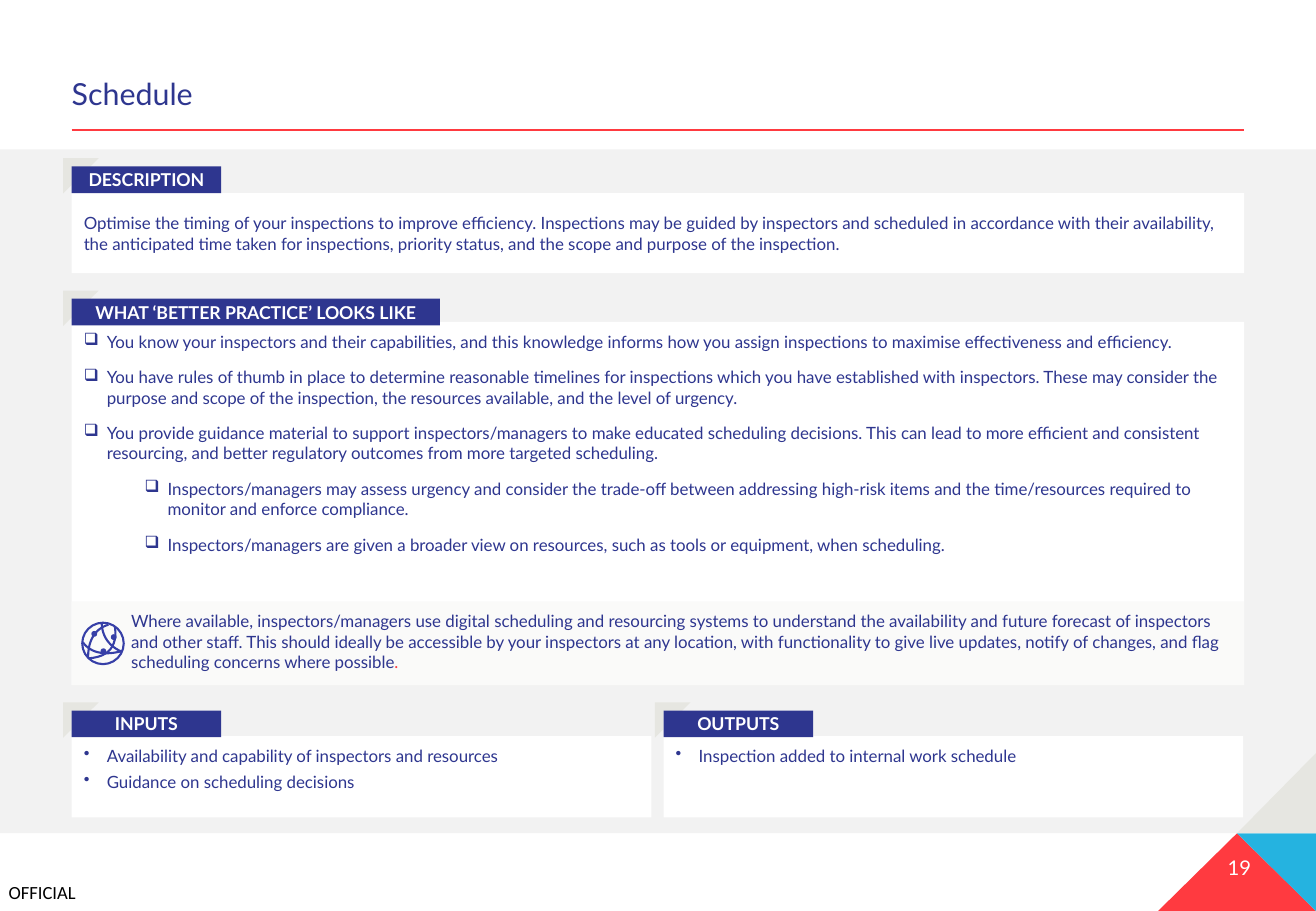
import pptx
import pptx.dml.color
import pptx.enum.shapes
import pptx.enum.text
import pptx.oxml
import pptx.oxml.ns
import pptx.util
from dataclasses import dataclass

WIDE, HIGH = 10.83, 7.5
KIND = pptx.enum.shapes.MSO_SHAPE
ALIGN = pptx.enum.text.PP_ALIGN
ANCHOR = pptx.enum.text.MSO_ANCHOR


@dataclass
class Theme:
    navy: str = "2E368F"
    red: str = "FF3A40"
    cyan: str = "25B3E0"
    stone: str = "E6E6E1"
    band: str = "F2F2F2"
    note: str = "FAFAF9"
    icon: str = "363FA7"
    white: str = "FFFFFF"
    black: str = "000000"
    font: str = "Lato"
    mark: str = "Calibri"
    title: float = 18
    page: float = 12
    label: float = 11
    tag: float = 10.5
    body: float = 10


LOOK = Theme()

# Grid in percent of the slide's width and height
LEFT, SPAN = 5.45, 89.1
HALF, RIGHT = 44.04, 50.42
TAG = 11.36


def col(share):
    return pptx.util.Inches(WIDE * share / 100)


def row(share):
    return pptx.util.Inches(HIGH * share / 100)


def place(left, top, width, height):
    return col(left), row(top), col(width), row(height)


def color(code):
    return pptx.dml.color.RGBColor.from_string(code)


def apply(item, values):
    for name, value in values.items():
        setattr(item, name, value)


def paint(shape, fill=None, line=None, weight=1):
    shape.shadow.inherit = False
    for part, code in ((shape.fill, fill), (shape.line.fill, line)):
        if code:
            part.solid()
            part.fore_color.rgb = color(code)
        else:
            part.background()
    if line:
        shape.line.width = pptx.util.Pt(weight)


def bullet(para, sign, left, hang):
    props = para._p.get_or_add_pPr()
    props.set("marL", str(left))
    props.set("indent", str(-hang))
    if sign:
        mark = pptx.oxml.parse_xml(
            f'<a:buChar {pptx.oxml.ns.nsdecls("a")} char="{sign}"/>')
        props.append(mark)


def write(frame, paras, size, ink, font=LOOK.font, bold=False, pad=(0.92, 0.67),
          anchor=ANCHOR.TOP, sign=None, inset=0, **form):
    """Each paragraph is a list of runs (text, ink) with a level before it."""
    apply(frame, {"word_wrap": True, "vertical_anchor": anchor,
                  "margin_left": col(pad[0]), "margin_right": col(pad[0]),
                  "margin_top": row(pad[1]), "margin_bottom": row(pad[1])})
    before = form.pop("before", 0)
    for index, (level, runs) in enumerate(paras):
        para = frame.paragraphs[0] if index == 0 else frame.add_paragraph()
        hang = 1.75 if sign else 0
        if sign or inset:
            bullet(para, sign, col(hang + inset + 4.62 * level), col(hang))
        apply(para, {"level": level, "alignment": ALIGN.LEFT, **form})
        if index and before:
            para.space_before = pptx.util.Pt(before)
        for text, tint in runs:
            run = para.add_run()
            run.text = text
            apply(run.font, {"name": font, "size": pptx.util.Pt(size), "bold": bold})
            run.font.color.rgb = color(tint or ink)


def lines(*texts, level=0):
    return [(level, [(text, None)]) for text in texts]


def block(slide, box, fill, kind=KIND.RECTANGLE):
    shape = slide.shapes.add_shape(kind, *place(*box))
    paint(shape, fill)
    return shape


def panel(slide, box, paras, fill=LOOK.white, pad=(0.92, 1.07), **form):
    shape = block(slide, box, fill)
    write(shape.text_frame, paras, LOOK.body, LOOK.navy, pad=pad,
          space_after=pptx.util.Pt(3), **form)


def tag(slide, left, top, text, width=TAG):
    frame = block(slide, (left - 0.65, top - 0.9, 2.7, 3.87), LOOK.stone,
                  KIND.HALF_FRAME)
    for index in range(2):
        frame.adjustments[index] = 0.24
    shape = block(slide, (left, top, width, 2.93), LOOK.navy)
    write(shape.text_frame, lines(text), LOOK.tag, LOOK.white, bold=True,
          anchor=ANCHOR.MIDDLE, alignment=ALIGN.CENTER)


def label(slide, box, text, size, ink, **form):
    shape = slide.shapes.add_textbox(*place(*box))
    write(shape.text_frame, lines(text), size, ink, **form)


def trace(slide, points, close=True, **ink):
    spots = [(col(x), row(y)) for x, y in points]
    pen = slide.shapes.build_freeform(*spots[0])
    pen.add_line_segments(spots[1:], close=close)
    paint(pen.convert_to_shape(), **ink)


def rule(slide, left, top, width):
    line = slide.shapes.add_connector(
        pptx.enum.shapes.MSO_CONNECTOR.STRAIGHT,
        col(left), row(top), col(left + width), row(top))
    line.line.color.rgb = color(LOOK.red)
    line.line.width = pptx.util.Pt(1.25)
    line._element.spPr.append(pptx.oxml.parse_xml(
        f'<a:effectLst {pptx.oxml.ns.nsdecls("a")}/>'))


def curve(start, bend, end, steps=12):
    for step in range(steps + 1):
        t = step / steps
        yield tuple((1 - t) ** 2 * a + 2 * t * (1 - t) * b + t * t * c
                    for a, b, c in zip(start, bend, end))


def globe(slide, left, top, width, height):
    def spot(x, y):
        return left + width * x, top + height * y

    ring = block(slide, (left, top, width, height), None, KIND.OVAL)
    paint(ring, line=LOOK.icon, weight=1.25)
    # Arcs and nodes in shares of the icon
    for arc in (((0.47, 0.03), (0.5, 0.5), (0.95, 0.7)),
                ((0.14, 0.83), (0.15, 0.2), (0.63, 0.05)),
                ((0.02, 0.48), (0.3, 0.85), (0.95, 0.69)),
                ((0.79, 0.1), (0.88, 0.8), (0.17, 0.86))):
        trace(slide, curve(*(spot(*point) for point in arc)), close=False,
              line=LOOK.icon, weight=1.25)
    for x, y in ((0.29, 0.27), (0.76, 0.35), (0.51, 0.69)):
        block(slide, (*spot(x - 0.07, y - 0.07), width * 0.14, height * 0.14),
              LOOK.icon, KIND.OVAL)


def frame(slide):
    # Grey band, corner triangles, page number and marking
    block(slide, (0, 16.4, 100, 75.07), LOOK.band)
    peak = (94, 91.47)
    for points, fill in (((peak, (88, 100), (100, 100)), LOOK.red),
                         (((100, 91.47), peak, (100, 100)), LOOK.cyan),
                         (((100, 82.67), peak, (100, 91.47)), LOOK.stone)):
        trace(slide, points, fill=fill)
    label(slide, (87.07, 93.2, 8, 4), "19", LOOK.page, LOOK.white,
          pad=(0, 0.67), alignment=ALIGN.RIGHT)
    label(slide, (0.65, 96.67, 6, 2.4), "OFFICIAL", LOOK.label, LOOK.black,
          font=LOOK.mark, pad=(0, 0))
    rule(slide, LEFT, 14.27, SPAN)


def head(slide, text):
    title = slide.shapes.title
    apply(title, dict(zip(("left", "top", "width", "height"),
                          place(LEFT, 7.87, SPAN, 5.07))))
    write(title.text_frame, lines(text), LOOK.title, LOOK.navy, pad=(0, 0.67),
          anchor=ANCHOR.BOTTOM, line_spacing=0.9)


def main():
    deck = pptx.Presentation()
    apply(deck, {"slide_width": col(100), "slide_height": row(100)})
    slide = deck.slides.add_slide(deck.slide_layouts.get_by_name("Title Only"))
    frame(slide)
    head(slide, "Schedule")

    # Description
    panel(slide, (LEFT, 21.2, SPAN, 8.8), lines(
        "Optimise the timing of your inspections to improve efficiency. Inspections may be guided by inspectors and scheduled in accordance with their availability, the anticipated time taken for inspections, priority status, and the scope and purpose of the inspection."),
        anchor=ANCHOR.MIDDLE, pad=(0.92, 0.67))
    tag(slide, LEFT, 18.27, "DESCRIPTION")

    # Better practice checklist
    panel(slide, (LEFT, 35.33, SPAN, 39.87), lines(
        "You know your inspectors and their capabilities, and this knowledge informs how you assign inspections to maximise effectiveness and efficiency.",
        "You have rules of thumb in place to determine reasonable timelines for inspections which you have established with inspectors. These may consider the purpose and scope of the inspection, the resources available, and the level of urgency.",
        "You provide guidance material to support inspectors/managers to make educated scheduling decisions. This can lead to more efficient and consistent resourcing, and better regulatory outcomes from more targeted scheduling.") + lines(
        "Inspectors/managers may assess urgency and consider the trade-off between addressing high-risk items and the time/resources required to monitor and enforce compliance.",
        "Inspectors/managers are given a broader view on resources, such as tools or equipment, when scheduling.",
        level=1), sign="❑", before=6)
    tag(slide, LEFT, 32.8, "WHAT ‘BETTER PRACTICE’ LOOKS LIKE", 27.98)

    # Digital note
    panel(slide, (LEFT, 66, SPAN, 9.2), [(0, [
        ("Where available, inspectors/managers use digital scheduling and resourcing systems to understand the availability and future forecast of inspectors and other staff. This should ideally be accessible by your inspectors at any location, with functionality to give live updates, notify of changes, and flag scheduling concerns where possible", None),
        (".", LOOK.red)])], fill=LOOK.note, inset=3.6)
    globe(slide, 6.25, 68.35, 3.15, 4.55)

    # Inputs and outputs
    for left, name, texts in (
            (LEFT, "INPUTS", ("Availability and capability of inspectors and resources",
                              "Guidance on scheduling decisions")),
            (RIGHT, "OUTPUTS", ("Inspection added to internal work schedule",))):
        panel(slide, (left, 80.8, HALF, 8.93), lines(*texts), sign="•")
        tag(slide, left, 78, name)

    deck.save("out.pptx")


if __name__ == "__main__":
    main()
